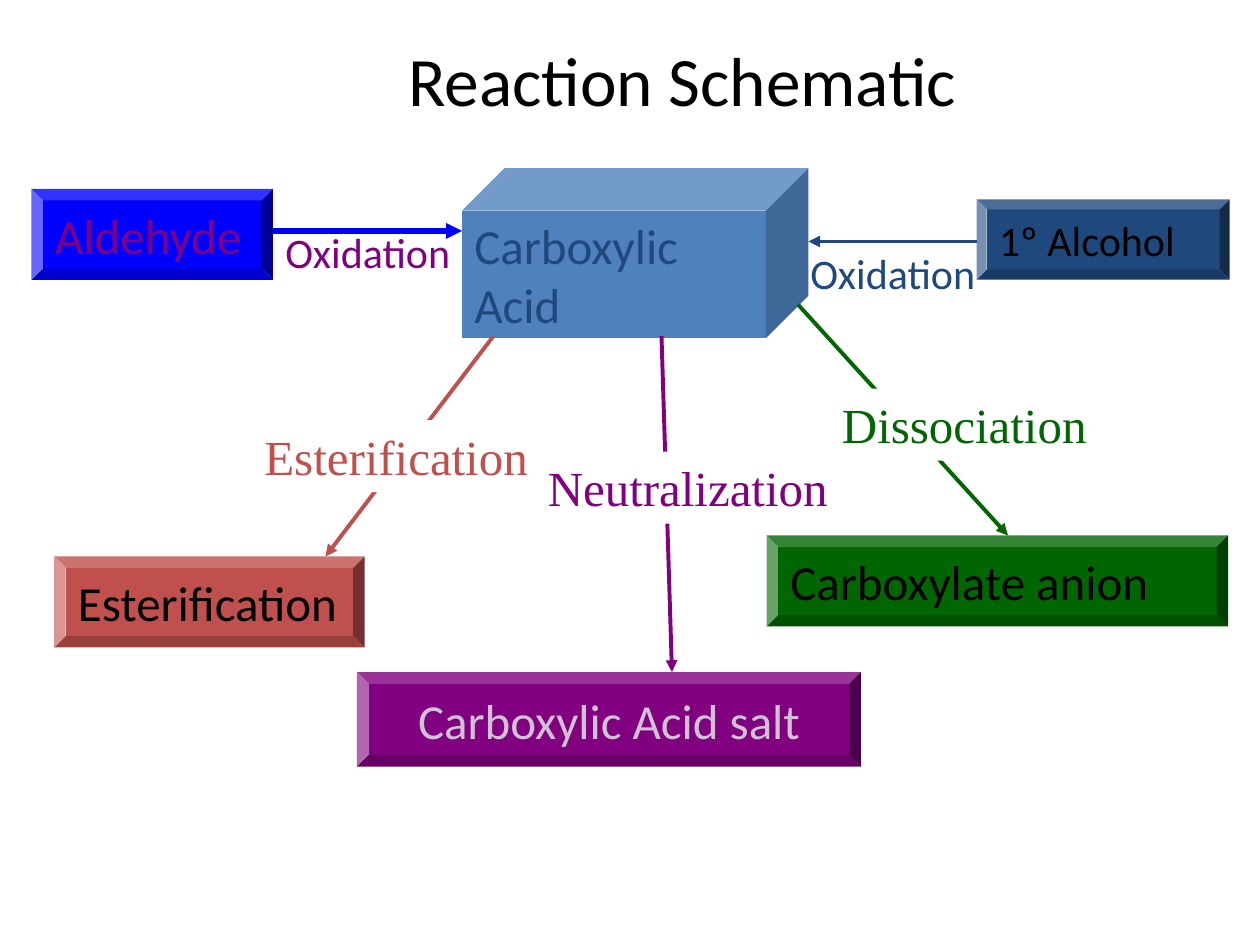
from dataclasses import dataclass

from lxml.etree import SubElement
from pptx import Presentation
from pptx.dml.color import RGBColor
from pptx.enum.shapes import MSO_CONNECTOR, MSO_SHAPE
from pptx.enum.text import MSO_ANCHOR, MSO_AUTO_SIZE, PP_ALIGN
from pptx.oxml.ns import qn
from pptx.slide import Slide
from pptx.text.text import TextFrame
from pptx.util import Pt

BLACK = RGBColor(0x00, 0x00, 0x00)
WHITE = RGBColor(0xFF, 0xFF, 0xFF)
BLUE = RGBColor(0x00, 0x00, 0xFF)
STEEL = RGBColor(0x4F, 0x81, 0xBD)
NAVY = RGBColor(0x1F, 0x49, 0x7D)
RED = RGBColor(0xC0, 0x50, 0x4D)
GREEN = RGBColor(0x00, 0x66, 0x00)
PURPLE = RGBColor(0x80, 0x00, 0x80)
LILAC = RGBColor(0xD0, 0xC1, 0xD5)

BODY_FONT = "Calibri"
LABEL_FONT = "Times New Roman"


@dataclass(frozen=True)
class Compound:
    text: str
    left: float
    top: float
    width: float
    height: float
    fill: RGBColor
    color: RGBColor = BLACK
    size: float = 28
    preset: MSO_SHAPE = MSO_SHAPE.BEVEL
    adjustment: float = 0.125
    wrap: bool = True


@dataclass(frozen=True)
class ReactionArrow:
    start: tuple[float, float]
    end: tuple[float, float]
    color: RGBColor
    width: float = 2.25


@dataclass(frozen=True)
class ReactionLabel:
    text: str
    left: float
    top: float
    width: float
    color: RGBColor
    height: float = 41.2
    size: float = 28
    font: str = LABEL_FONT
    masks_arrow: bool = True


COMPOUNDS = [
    Compound("Carboxylic Acid", 264, 96, 198, 97.2, STEEL, NAVY,
             preset=MSO_SHAPE.CUBE, adjustment=0.25),
    Compound("Esterification", 31, 318, 177.4, 52, RED, wrap=False),
    Compound("1º Alcohol", 558, 114, 144.7, 45.8, NAVY, size=24),
    Compound("Carboxylate anion", 438, 306, 263.7, 52, GREEN),
    Compound("Aldehyde", 18, 108, 138, 52, BLUE, PURPLE),
]
SALT = Compound("Carboxylic Acid salt", 204, 384, 288, 54, PURPLE, LILAC)

ARROWS = [
    ReactionArrow((282, 192), (186, 318), RED),
    ReactionArrow((558, 138), (462, 138), NAVY),
    ReactionArrow((378, 192), (384, 384), PURPLE),
    ReactionArrow((456, 174), (576, 306), GREEN),
    ReactionArrow((156, 132), (264, 132), BLUE, 3),
]

LABELS = [
    ReactionLabel("Esterification", 144, 240, 165.6, RED),
    ReactionLabel("Neutralization", 306, 258, 175, PURPLE),
    ReactionLabel("Dissociation", 474, 222, 154.8, GREEN),
    ReactionLabel("Oxidation", 156, 126, 110, PURPLE, 36, 24, BODY_FONT, False),
    ReactionLabel("Oxidation", 456, 138, 110, NAVY, 36, 24, BODY_FONT, False),
]


def write_text(text_frame: TextFrame, text: str, font_name: str, size: float,
               color: RGBColor, alignment: PP_ALIGN = PP_ALIGN.LEFT) -> None:
    text_frame.text = text
    paragraph = text_frame.paragraphs[0]
    paragraph.alignment = alignment
    font = paragraph.runs[0].font
    font.name = font_name
    font.size = Pt(size)
    font.color.rgb = color


def add_title(slide: Slide) -> None:
    title = slide.shapes.title
    title.left, title.top, title.width, title.height = Pt(84), Pt(18), Pt(612), Pt(54)
    title.text_frame.vertical_anchor = MSO_ANCHOR.MIDDLE
    write_text(title.text_frame, "Reaction Schematic", BODY_FONT, 39.6, BLACK,
               PP_ALIGN.CENTER)


def add_compound(slide: Slide, compound: Compound,
                 alignment: PP_ALIGN = PP_ALIGN.LEFT,
                 anchor: MSO_ANCHOR = MSO_ANCHOR.MIDDLE) -> None:
    shape = slide.shapes.add_shape(
        compound.preset, Pt(compound.left), Pt(compound.top),
        Pt(compound.width), Pt(compound.height))
    shape.adjustments[0] = compound.adjustment
    shape.shadow.inherit = False
    shape.fill.solid()
    shape.fill.fore_color.rgb = compound.fill
    shape.line.fill.background()
    text_frame = shape.text_frame
    text_frame.word_wrap = compound.wrap
    text_frame.vertical_anchor = anchor
    write_text(text_frame, compound.text, BODY_FONT, compound.size,
               compound.color, alignment)


def add_arrow(slide: Slide, arrow: ReactionArrow) -> None:
    connector = slide.shapes.add_connector(
        MSO_CONNECTOR.STRAIGHT, *map(Pt, arrow.start + arrow.end))
    connector.line.color.rgb = arrow.color
    connector.line.width = Pt(arrow.width)
    line = connector.line._get_or_add_ln()
    SubElement(line, qn("a:tailEnd"), type="triangle")
    SubElement(connector._element.spPr, qn("a:effectLst"))


def add_label(slide: Slide, label: ReactionLabel) -> None:
    text_box = slide.shapes.add_textbox(
        Pt(label.left), Pt(label.top), Pt(label.width), Pt(label.height))
    if label.masks_arrow:
        text_box.fill.solid()
        text_box.fill.fore_color.rgb = WHITE
    text_frame = text_box.text_frame
    text_frame.word_wrap = False
    text_frame.auto_size = MSO_AUTO_SIZE.SHAPE_TO_FIT_TEXT
    write_text(text_frame, label.text, label.font, label.size, label.color)


def main() -> None:
    presentation = Presentation()
    presentation.slide_width, presentation.slide_height = Pt(720), Pt(540)
    slide = presentation.slides.add_slide(presentation.slide_layouts[5])
    add_title(slide)
    add_compound(slide, SALT, PP_ALIGN.CENTER, MSO_ANCHOR.TOP)
    for compound in COMPOUNDS:
        add_compound(slide, compound)
    for arrow in ARROWS:
        add_arrow(slide, arrow)
    for label in LABELS:
        add_label(slide, label)
    presentation.save("out.pptx")


if __name__ == "__main__":
    main()
